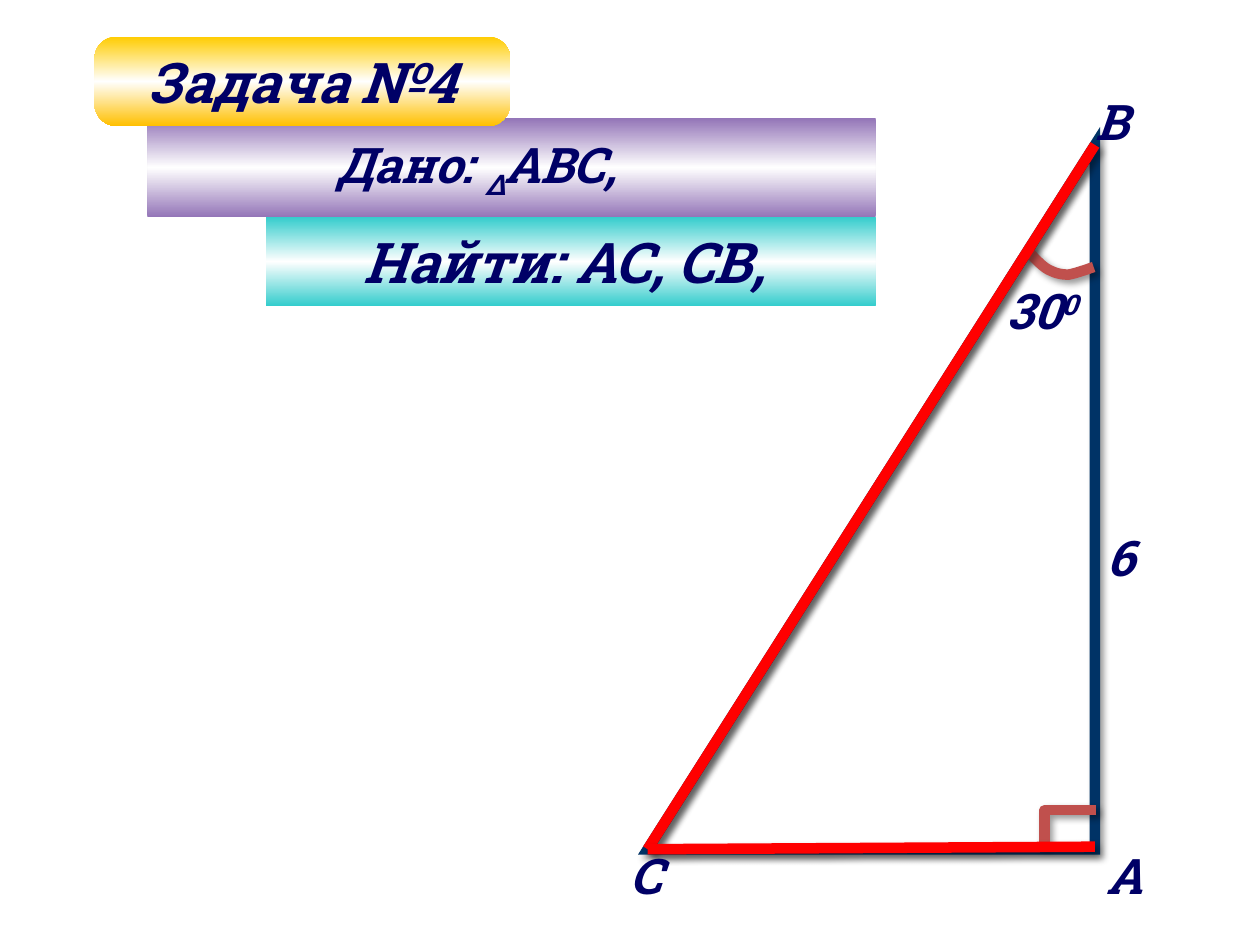
import copy
import pptx
import pptx.util
import pptx.dml.color
import pptx.enum.shapes
import pptx.enum.text
import pptx.oxml
import pptx.oxml.ns

Inches, Pt = pptx.util.Inches, pptx.util.Pt
KIND = pptx.enum.shapes.MSO_SHAPE
FONT, INK, NAVY, ROSE, RED = "Roboto Slab", "000066", "003366", "C0504D", "FF0000"

# Triangle corners
B, C, A = (8.69, 1.15), (5.14, 6.74), (8.69, 6.74)
FOOT = (8.69, 6.72)

# Labels: left, top, width, height, wrap, runs of (text, baseline)
LABELS = [
    (8.6, 0.68, 0.46, 0.57, True, [("B", 0)]),
    (4.9, 6.66, 0.46, 0.57, True, [("C", 0)]),
    (8.68, 4.14, 0.47, 0.57, False, [("6", 0)]),
    (7.89, 2.18, 0.91, 0.57, False, [("30", 0), ("0", 30)]),
    (8.68, 6.66, 0.46, 0.57, True, [("А", 0)]),
]

# Banners: kind, left, top, width, height, colours, size, right inset, runs
BANNERS = [
    (KIND.RECTANGLE, 2.11, 1.72, 4.84, 0.71, ("33CCCC", "FFFFFF", "33CCCC"),
     32, 0.2, [("Найти: АС, СВ,", 0)]),
    (KIND.RECTANGLE, 1.17, 0.94, 5.78, 0.78, ("9476B8", "FFFFFF", "9476B8"),
     28, 0.66, [("Дано: ", 0), ("Δ", -25), ("АВС,", 0)]),
    (KIND.ROUNDED_RECTANGLE, 0.75, 0.29, 3.3, 0.71, ("FFCC00", "FFFFFF", "FFC000"),
     32, 0.1, [("Задача №4", 0)]),
]

# Angle marks: Bezier pieces at B, corner points at A
ARC = [
    [(8.68, 2.12), (8.65, 2.13), (8.54, 2.17), (8.48, 2.18)],
    [(8.48, 2.18), (8.42, 2.18), (8.38, 2.17), (8.32, 2.14)],
    [(8.32, 2.14), (8.26, 2.11), (8.18, 2.01), (8.14, 1.98)],
]
SQUARE = [(8.7, 6.43), (8.29, 6.43), (8.29, 6.72)]


def tint(code):
    return pptx.dml.color.RGBColor.from_string(code)


def write(frame, runs, size):
    para = frame.paragraphs[0]
    for text, base in runs:
        run = para.add_run()
        run.text = text
        font = run.font
        font.name, font.size = FONT, Pt(size)
        font.bold = font.italic = True
        font.color.rgb = tint(INK)
        if base:
            run._r.get_or_add_rPr().set("baseline", str(base * 1000))
    return para


def stroke(shape, color, join="round"):
    """Thick line with a soft shadow."""
    shape.line.color.rgb = tint(color)
    shape.line.width = Pt(6)
    space = pptx.oxml.ns.nsdecls("a")
    props = shape._element.spPr
    props.find(pptx.oxml.ns.qn("a:ln")).append(
        pptx.oxml.parse_xml(f"<a:{join} {space}/>"))
    props.append(pptx.oxml.parse_xml(
        f'<a:effectLst {space}><a:outerShdw blurRad="{Pt(4)}" dist="{Pt(3)}" '
        'dir="2700000" rotWithShape="0"><a:srgbClr val="000000">'
        '<a:alpha val="40000"/></a:srgbClr></a:outerShdw></a:effectLst>'))


def trace(shapes, points, color):
    spots = [(Inches(x), Inches(y)) for x, y in points]
    pen = shapes.build_freeform(*spots[0])
    pen.add_line_segments(spots[1:], close=False)
    shape = pen.convert_to_shape()
    shape.fill.background()
    stroke(shape, color)


def curve(pieces, steps=8):
    points = [pieces[0][0]]
    for p, q, r, s in pieces:
        for i in range(1, steps + 1):
            t = i / steps
            u = 1 - t
            points.append(tuple(
                u**3 * a + 3 * u * u * t * b + 3 * u * t * t * c + t**3 * d
                for a, b, c, d in zip(p, q, r, s)))
    return points


def blend(shape, colors):
    """Top-to-bottom gradient with three even stops."""
    fill = shape.fill
    fill.gradient()
    fill.gradient_angle = 270
    first = next(shape._element.spPr.iter(pptx.oxml.ns.qn("a:gs")))
    first.addnext(copy.deepcopy(first))
    for i, (stop, color) in enumerate(zip(fill.gradient_stops, colors)):
        stop.position = i / 2
        stop.color.rgb = tint(color)


def main():
    deck = pptx.Presentation()
    deck.slide_width, deck.slide_height = Inches(10), Inches(7.5)
    shapes = deck.slides.add_slide(deck.slide_layouts[6]).shapes

    # Triangle, mirrored so the right angle is at A
    shape = shapes.add_shape(KIND.RIGHT_TRIANGLE, Inches(C[0]), Inches(B[1]),
                             Inches(A[0] - C[0]), Inches(A[1] - B[1]))
    shape._element.spPr.xfrm.set("flipH", "1")
    shape.fill.background()
    stroke(shape, NAVY, 'miter lim="800000"')

    # Angle marks
    trace(shapes, curve(ARC), ROSE)
    trace(shapes, SQUARE, ROSE)

    # Sides to find
    for start, end in ((B, C), (C, FOOT)):
        side = shapes.add_connector(pptx.enum.shapes.MSO_CONNECTOR.STRAIGHT,
                                    *(Inches(n) for n in start + end))
        stroke(side, RED)

    # Labels
    for *place, wrap, runs in LABELS:
        frame = shapes.add_textbox(*map(Inches, place)).text_frame
        frame.word_wrap = wrap
        frame.auto_size = pptx.enum.text.MSO_AUTO_SIZE.SHAPE_TO_FIT_TEXT
        write(frame, runs, 28)

    # Banners
    for kind, *place, colors, size, inset, runs in BANNERS:
        shape = shapes.add_shape(kind, *map(Inches, place))
        if kind == KIND.ROUNDED_RECTANGLE:
            shape.adjustments[0] = 0.25
        shape.shadow.inherit = False
        shape.line.fill.background()
        blend(shape, colors)
        frame = shape.text_frame
        frame.word_wrap = False
        frame.margin_right = Inches(inset)
        frame.vertical_anchor = pptx.enum.text.MSO_ANCHOR.MIDDLE
        write(frame, runs, size).alignment = pptx.enum.text.PP_ALIGN.CENTER

    deck.save("out.pptx")


if __name__ == "__main__":
    main()
